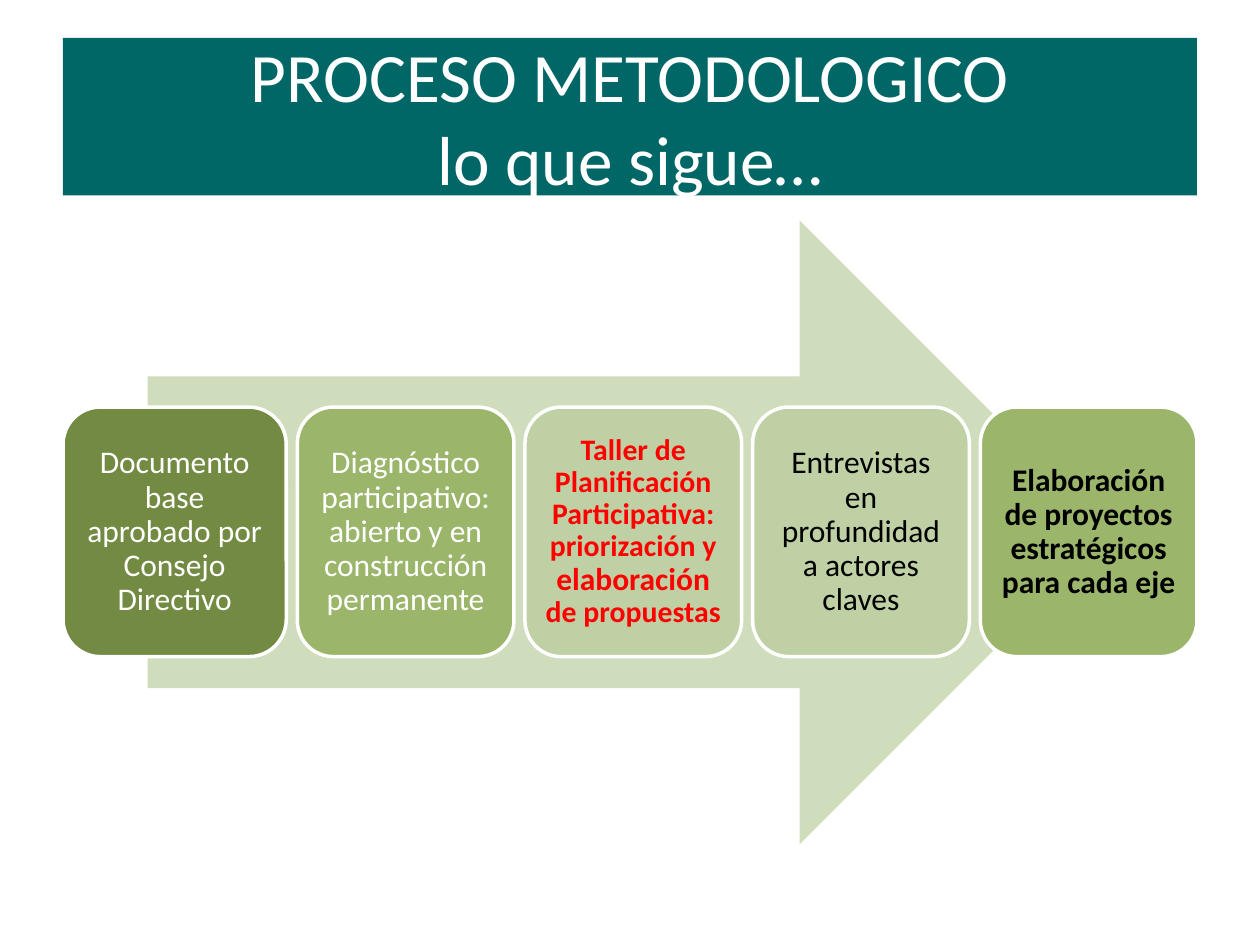
from pptx import Presentation
from pptx.dml.color import RGBColor
from pptx.enum.shapes import MSO_SHAPE
from pptx.enum.text import MSO_ANCHOR, PP_ALIGN
from pptx.util import Pt


def color(value):
    return RGBColor.from_string(value)


def write_text(paragraph, text, size=18, ink="FFFFFF", bold=False, font="Calibri"):
    run = paragraph.add_run()
    run.text = text
    run.font.name = font
    run.font.size = Pt(size)
    run.font.bold = bold
    run.font.color.rgb = color(ink)


class ProcessSlide:
    box_top, box_height = 232.6, 142.6
    gap = 6.3

    def __init__(self, presentation):
        self.slide = presentation.slides.add_slide(presentation.slide_layouts[6])

    def add_block(self, kind, left, top, width, height, fill):
        shape = self.slide.shapes.add_shape(kind, Pt(left), Pt(top), Pt(width), Pt(height))
        shape.shadow.inherit = False
        shape.fill.solid()
        shape.fill.fore_color.rgb = color(fill)
        shape.line.fill.background()
        return shape

    def prepare_frame(self, shape, inset):
        frame = shape.text_frame
        frame.word_wrap = True
        frame.vertical_anchor = MSO_ANCHOR.MIDDLE
        frame.margin_left = frame.margin_right = Pt(inset)
        frame.margin_top = frame.margin_bottom = Pt(inset)
        return frame

    def add_title(self, lines):
        banner = self.add_block(MSO_SHAPE.RECTANGLE, 36, 21.6, 648, 90, "006666")
        frame = self.prepare_frame(banner, 3.6)
        for index, line in enumerate(lines):
            paragraph = frame.add_paragraph() if index else frame.paragraphs[0]
            paragraph.alignment = PP_ALIGN.CENTER
            write_text(paragraph, line, size=39.6)

    def add_arrow(self):
        self.add_block(MSO_SHAPE.RIGHT_ARROW, 84.3, 126, 550.8, 356.4, "D0DDBC")

    def add_step(self, left, width, fill, runs, **text_format):
        box = self.add_block(MSO_SHAPE.ROUNDED_RECTANGLE, left, self.box_top,
                             width, self.box_height, fill)
        box.line.color.rgb = color("FFFFFF")
        box.line.width = Pt(2)
        paragraph = self.prepare_frame(box, 5).paragraphs[0]
        paragraph.alignment = PP_ALIGN.CENTER
        paragraph.line_spacing = 0.9
        for text, size in runs:
            write_text(paragraph, text, size=size, **text_format)


def main():
    presentation = Presentation()
    presentation.slide_width, presentation.slide_height = Pt(720), Pt(540)
    process = ProcessSlide(presentation)

    # Title banner and background arrow
    process.add_title(["PROCESO METODOLOGICO", "lo que sigue…"])
    process.add_arrow()

    # Steps: width, fill, runs with their sizes, text format
    steps = [
        (127.6, "738A42", [("Documento base aprobado por Consejo Directivo", 18)], {}),
        (123.8, "9BB66B",
         [("Diagnóstico participativo: abierto y en construcción permanente", 18)], {}),
        (123.8, "BFD0A4",
         [("Taller de Planificación Participativa: priorización y ", 17),
          ("elaboración", 18), (" de propuestas", 17)],
         {"ink": "FF0000", "bold": True}),
        (123.8, "BFD0A4", [("Entrevistas en profundidad a actores claves", 18)],
         {"ink": "000000"}),
        (123.8, "9BB66B", [("Elaboración de proyectos estratégicos para cada eje", 18)],
         {"ink": "000000", "bold": True}),
    ]
    left = 36
    for width, fill, runs, text_format in steps:
        process.add_step(left, width, fill, runs, **text_format)
        left += width + process.gap

    presentation.save("out.pptx")


if __name__ == "__main__":
    main()
